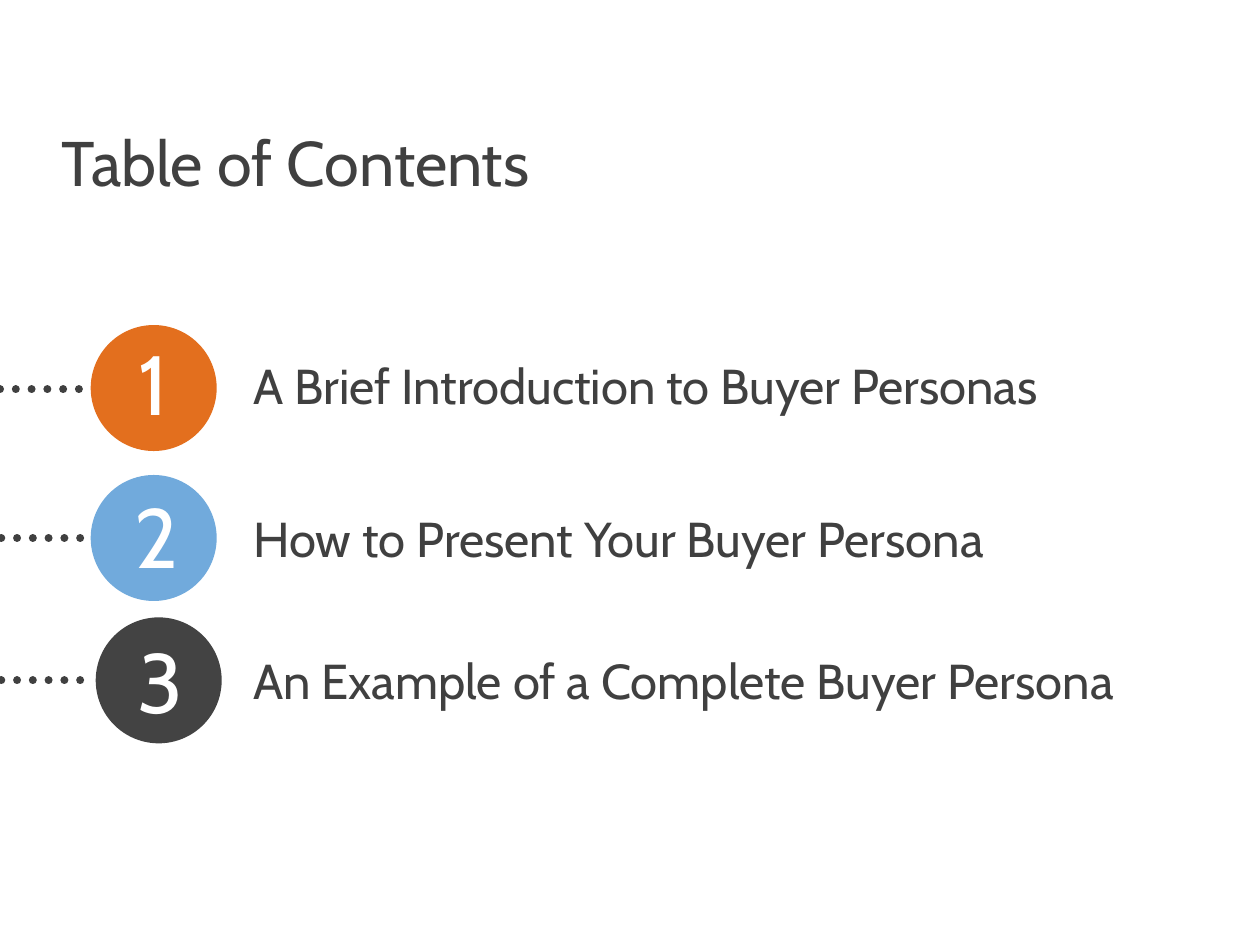
import dataclasses

import pptx
import pptx.dml.color
import pptx.enum.dml
import pptx.enum.shapes
import pptx.enum.text
import pptx.oxml.ns
import pptx.util
import lxml.etree

Inches = pptx.util.Inches
Anchor = pptx.enum.text.MSO_ANCHOR
Align = pptx.enum.text.PP_ALIGN


@dataclasses.dataclass(frozen=True)
class Theme:
    font: str = "Cabin"
    ink: str = "404040"
    white: str = "FFFFFF"
    orange: str = "E36F1E"
    blue: str = "71AADC"
    charcoal: str = "434343"
    title_size: int = 36
    entry_size: int = 28
    number_size: int = 48
    dots_width: float = 4.5


theme = Theme()


def rgb(value):
    return pptx.dml.color.RGBColor.from_string(value)


def add_text(text, *, box, size, color=theme.ink, align=Align.LEFT,
             anchor=Anchor.TOP, insets=(0.1, 0.05, 0.1, 0.05), spacing=None):
    frame = slide.shapes.add_textbox(*map(Inches, box)).text_frame
    frame.word_wrap = True
    frame.vertical_anchor = anchor
    (frame.margin_left, frame.margin_top,
     frame.margin_right, frame.margin_bottom) = map(Inches, insets)
    paragraph = frame.paragraphs[0]
    paragraph.alignment = align
    paragraph.line_spacing = spacing
    run = paragraph.add_run()
    run.text = text
    run.font.name = theme.font
    run.font.size = pptx.util.Pt(size)
    run.font.color.rgb = rgb(color)


deck = pptx.Presentation()
deck.slide_width = Inches(10)
deck.slide_height = Inches(7.5)
slide = deck.slides.add_slide(deck.slide_layouts[6])

add_text("Table of Contents", box=(0.39, 1, 4.36, 0.68),
         size=theme.title_size, spacing=0.9)

entries = [
    ("A Brief Introduction to Buyer Personas", theme.orange,
     2.75, (0.72, 2.58), (0.68, 2.58), (0, 3.09)),
    ("How to Present Your Buyer Persona", theme.blue,
     3.96, (0.72, 3.77), (0.7, 3.8), (0.01, 4.27)),
    ("An Example of a Complete Buyer Persona", theme.charcoal,
     5.09, (0.76, 4.9), (0.73, 4.95), (0.01, 5.4)),
]

for number, (entry, color, entry_top, circle_at, number_at, dots_at) in enumerate(entries, 1):
    add_text(entry, box=(1.97, entry_top, 7.31, 0.63), size=theme.entry_size,
             anchor=Anchor.MIDDLE, insets=(0.04, 0.04, 0.04, 0), spacing=0.9)

    dots_left, dots_y = dots_at
    dots = slide.shapes.add_connector(
        pptx.enum.shapes.MSO_CONNECTOR.STRAIGHT,
        Inches(dots_left), Inches(dots_y), Inches(dots_left + 0.75), Inches(dots_y))
    dots.line.color.rgb = rgb(theme.ink)
    dots.line.width = pptx.util.Pt(theme.dots_width)
    dots.line.dash_style = pptx.enum.dml.MSO_LINE.ROUND_DOT
    dots.line._get_or_add_ln().set("cap", "rnd")
    lxml.etree.SubElement(dots._element.spPr, pptx.oxml.ns.qn("a:effectLst"))

    circle = slide.shapes.add_shape(
        pptx.enum.shapes.MSO_SHAPE.OVAL, *map(Inches, circle_at), Inches(1), Inches(1))
    circle.shadow.inherit = False
    circle.fill.solid()
    circle.fill.fore_color.rgb = rgb(color)
    circle.line.fill.background()

    add_text(str(number), box=(*number_at, 1.08, 0.91), size=theme.number_size,
             color=theme.white, align=Align.CENTER)

deck.save("out.pptx")
